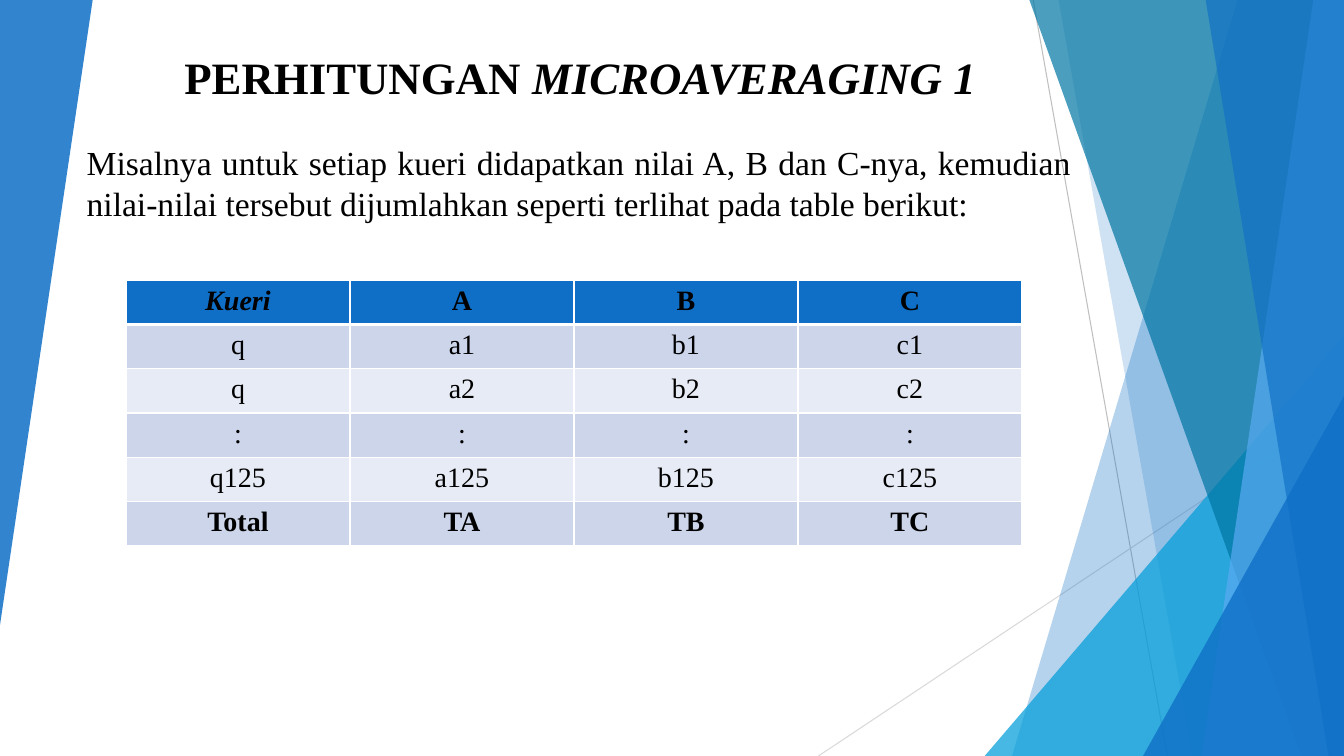
"""Build the microaveraging slide with its faceted backdrop and query table."""
from dataclasses import dataclass
from typing import Any

from lxml import etree
from pptx import Presentation
from pptx import util as u
from pptx.dml import color
from pptx.enum import shapes, text
from pptx.oxml import ns


@dataclass(frozen=True)
class Theme:
    """Colours, font and type sizes."""
    blue: str = "0F6FC6"
    cyan: str = "009DD9"
    teal: str = "0076A3"
    sky: str = "59AAF2"
    ink: str = "000000"
    white: str = "FFFFFF"
    gray: str = "BFBFBF"
    pale: str = "D9D9D9"
    bands: tuple[str, str] = ("E7EBF5", "CCD5EA")
    face: str = "Times New Roman"
    title: float = 32
    body: float = 24
    cell: float = 20


@dataclass(frozen=True)
class Ray:
    """Thin line between two points."""
    start: tuple[float, float]
    end: tuple[float, float]
    tint: str


@dataclass(frozen=True)
class Pane:
    """Band from a slanted left edge to the slide's right edge."""
    top: float
    foot: float
    tint: str
    alpha: int


@dataclass(frozen=True)
class Wedge:
    """Right triangle given by its box and turn."""
    box: tuple[float, float, float, float]
    tint: str
    alpha: int
    turn: float = 0


LOOK = Theme()
WIDE, HIGH, RISE = 960, 540, -0.6
SCENE = (
    Ray((738, 0), (833.8, HIGH), LOOK.gray),
    Ray((WIDE, 290.2), (584.6, HIGH), LOOK.pale),
    Pane(884.2, 722.9, LOOK.blue, 30),
    Pane(756, 851.8, LOOK.blue, 20),
    Wedge((703.4, 239.8, 256.6, 300.2), LOOK.cyan, 72),
    Pane(735.1, 929.5, LOOK.teal, 70),
    Pane(938.2, 858.2, LOOK.sky, 70),
    Pane(861.1, 949, LOOK.blue, 65),
    Wedge((816.5, 283, 143.5, 257), LOOK.blue, 80),
    Wedge((0, 0, 66.2, 446.4), LOOK.blue, 85, 180),
)
ROWS = (
    ("Kueri", "A", "B", "C"),
    ("q", "a1", "b1", "c1"),
    ("q", "a2", "b2", "c2"),
    (":",) * 4,
    ("q125", "a125", "b125", "c125"),
    ("Total", "TA", "TB", "TC"),
)


def apply(item: Any, form: dict[str, Any]) -> None:
    """Set each named attribute on the item."""
    for name, value in form.items():
        setattr(item, name, value)


def rgb(tint: str) -> color.RGBColor:
    """Turn a hex string into a colour."""
    return color.RGBColor.from_string(tint)


def place(shape: Any, box: tuple[float, ...]) -> None:
    """Move and size a shape in points."""
    apply(shape, dict(zip(("left", "top", "width", "height"), map(u.Pt, box))))


def write(para: Any, words: str, size: float, **form: bool) -> None:
    """Add one formatted run to a paragraph."""
    run = para.add_run()
    run.text = words
    apply(run.font, {"name": LOOK.face, "size": u.Pt(size), **form})
    run.font.color.rgb = rgb(LOOK.ink)


def glaze(shape: Any, tint: str, alpha: int) -> None:
    """Give a shape a see-through fill and no line or shadow."""
    shape.shadow.inherit = False
    shape.line.fill.background()
    shape.fill.solid()
    shape.fill.fore_color.rgb = rgb(tint)
    node = shape.element.find(".//" + ns.qn("a:srgbClr"))
    etree.SubElement(node, ns.qn("a:alpha"), val=str(alpha * 1000))


def draw(slide: Any, part: Ray | Pane | Wedge) -> None:
    """Draw one part of the backdrop."""
    if isinstance(part, Ray):
        line = slide.shapes.add_connector(
            shapes.MSO_CONNECTOR.STRAIGHT, *map(u.Pt, part.start + part.end))
        line.line.color.rgb = rgb(part.tint)
        line.line.width = u.Pt(0.75)
        etree.SubElement(line.element.spPr, ns.qn("a:effectLst"))
        return
    if isinstance(part, Pane):
        path = slide.shapes.build_freeform(u.Pt(part.top), u.Pt(RISE))
        ends = ((WIDE, RISE), (WIDE, HIGH), (part.foot, HIGH))
        path.add_line_segments([(u.Pt(x), u.Pt(y)) for x, y in ends])
        shape = path.convert_to_shape()
    else:
        shape = slide.shapes.add_shape(
            shapes.MSO_SHAPE.ISOSCELES_TRIANGLE, *map(u.Pt, part.box))
        shape.adjustments[0] = 1
        shape.rotation = part.turn
    glaze(shape, part.tint, part.alpha)


def frame(shape: Any, box: tuple[float, ...], anchor: Any, align: Any) -> Any:
    """Set up a placeholder above the backdrop and return its paragraph."""
    place(shape, box)
    shape.element.getparent().append(shape.element)
    apply(shape.text_frame, {"word_wrap": True, "vertical_anchor": anchor,
                             "auto_size": text.MSO_AUTO_SIZE.NONE})
    para = shape.text_frame.paragraphs[0]
    para.alignment = align
    return para


def edge(cell: Any, row: int) -> None:
    """Rule a cell in white, heavier below the header."""
    props = cell._tc.get_or_add_tcPr()
    for side in "LRTB":
        width = 3 if (row, side) in ((0, "B"), (1, "T")) else 1
        line = etree.SubElement(props, ns.qn("a:ln" + side), w=str(u.Pt(width)))
        fill = etree.SubElement(line, ns.qn("a:solidFill"))
        etree.SubElement(fill, ns.qn("a:srgbClr"), val=LOOK.white)


def chart(slide: Any) -> None:
    """Add the query table."""
    grid = slide.shapes.add_table(
        len(ROWS), len(ROWS[0]), *map(u.Pt, (90, 200.2, 640, 189.6))).table
    for r, row in enumerate(ROWS):
        for c, words in enumerate(row):
            cell = grid.cell(r, c)
            edge(cell, r)
            cell.fill.solid()
            cell.fill.fore_color.rgb = rgb(LOOK.bands[r % 2] if r else LOOK.blue)
            para = cell.text_frame.paragraphs[0]
            para.alignment = text.PP_ALIGN.CENTER
            write(para, words, LOOK.cell, bold=r in (0, len(ROWS) - 1),
                  italic=r == c == 0)


def main() -> None:
    """Build and save the slide."""
    deck = Presentation()
    apply(deck, {"slide_width": u.Pt(WIDE), "slide_height": u.Pt(HIGH)})
    slide = deck.slides.add_slide(deck.slide_layouts[0])
    for part in SCENE:
        draw(slide, part)
    head = frame(slide.shapes.title, (98, 26.6, 633, 51.2),
                 text.MSO_ANCHOR.BOTTOM, text.PP_ALIGN.CENTER)
    write(head, "PERHITUNGAN ", LOOK.title, bold=True)
    write(head, "MICROAVERAGING 1", LOOK.title, bold=True, italic=True)
    body = frame(slide.placeholders[1], (54.7, 98, 717.8, 398),
                 text.MSO_ANCHOR.TOP, text.PP_ALIGN.JUSTIFY)
    body.space_before = u.Pt(10)
    write(body, "Misalnya untuk setiap kueri didapatkan nilai A, B dan C-nya, "
          "kemudian nilai-nilai tersebut dijumlahkan seperti terlihat pada "
          "table berikut:", LOOK.body)
    chart(slide)
    deck.save("out.pptx")


if __name__ == "__main__":
    main()
